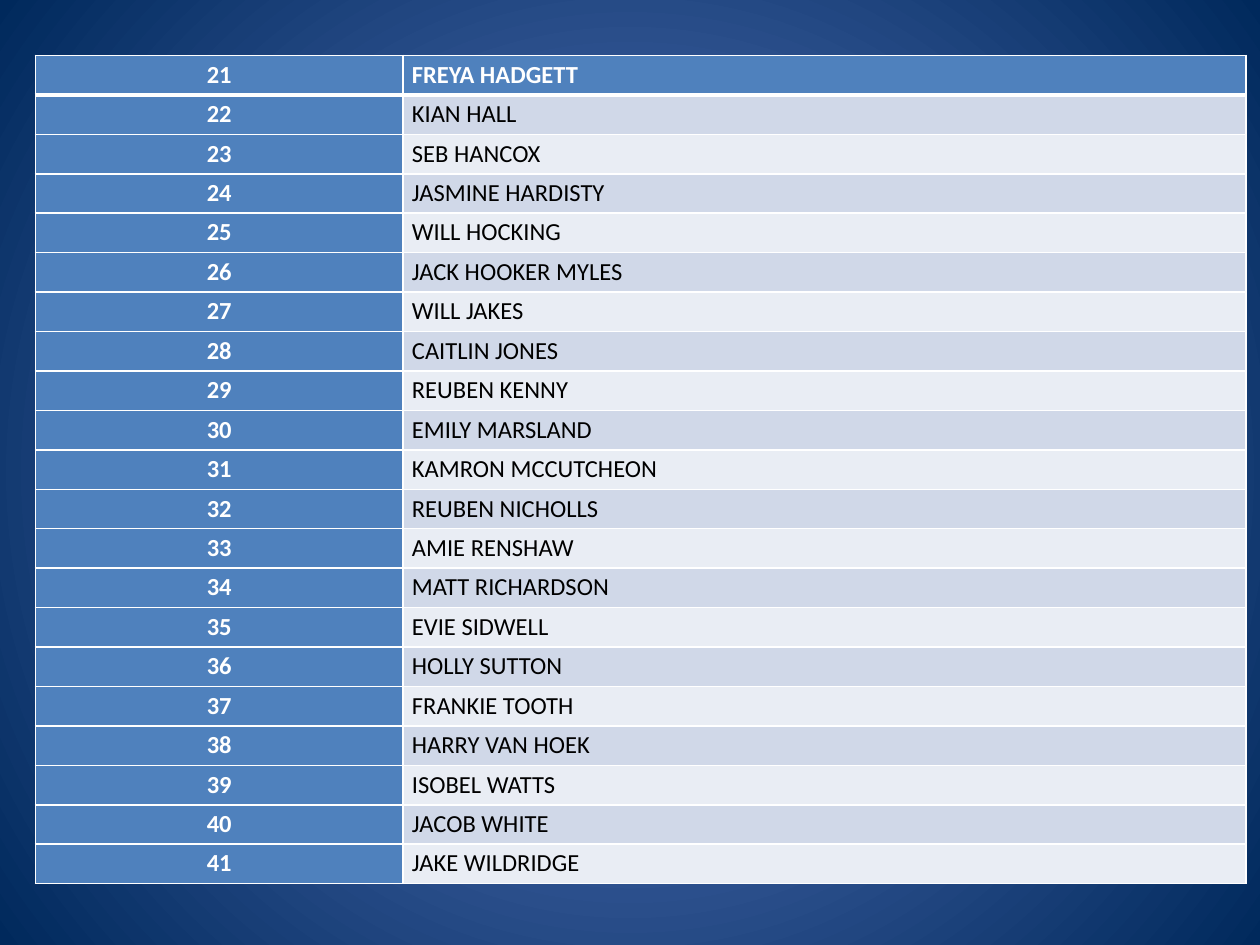
from lxml import etree
from pptx import Presentation
from pptx.dml.color import RGBColor
from pptx.enum import text
from pptx.oxml import parse_xml
from pptx.oxml.ns import nsdecls, qn
from pptx.util import Inches, Pt

WHITE = RGBColor(0xFF, 0xFF, 0xFF)
BLACK = RGBColor(0x00, 0x00, 0x00)
BLUE = RGBColor(0x4F, 0x81, 0xBD)
DARK = RGBColor(0xD0, 0xD8, 0xE8)
LIGHT = RGBColor(0xE9, 0xED, 0xF4)
GLOW = RGBColor(0x5E, 0x7C, 0xC5)
NAVY = RGBColor(0x00, 0x29, 0x5C)

FIRST = 21
NAMES = [
    "FREYA HADGETT", "KIAN HALL", "SEB HANCOX", "JASMINE HARDISTY",
    "WILL HOCKING", "JACK HOOKER MYLES", "WILL JAKES", "CAITLIN JONES",
    "REUBEN KENNY", "EMILY MARSLAND", "KAMRON MCCUTCHEON",
    "REUBEN NICHOLLS", "AMIE RENSHAW", "MATT RICHARDSON", "EVIE SIDWELL",
    "HOLLY SUTTON", "FRANKIE TOOTH", "HARRY VAN HOEK", "ISOBEL WATTS",
    "JACOB WHITE", "JAKE WILDRIDGE",
]


def add_border(cell, side, width):
    line = etree.SubElement(cell._tc.get_or_add_tcPr(), qn("a:ln" + side),
                            w=str(Pt(width)))
    fill = etree.SubElement(line, qn("a:solidFill"))
    etree.SubElement(fill, qn("a:srgbClr"), val=str(WHITE))


def fill_cell(cell, words, back, ink, bold):
    cell.margin_left = cell.margin_right = Inches(0.07)
    cell.margin_top = cell.margin_bottom = 0
    cell.fill.solid()
    cell.fill.fore_color.rgb = back
    cell.text = words
    para = cell.text_frame.paragraphs[0]
    para.line_spacing = 1.15
    para.font.name = "Calibri"
    para.font.size = Pt(14)
    para.font.bold = bold
    para.font.color.rgb = ink
    return para


prs = Presentation()
prs.slide_width = Inches(10)
prs.slide_height = Inches(7.5)
slide = prs.slides.add_slide(prs.slide_layouts[6])

# Background: a glow from the centre outwards
back = slide.background.fill
back.gradient()
for stop, color, place in zip(back.gradient_stops, (GLOW, NAVY), (0, 1)):
    stop.color.rgb = color
    stop.position = place
grad = slide._element.find(".//" + qn("a:gradFill"))
grad.replace(grad.find(qn("a:lin")), parse_xml(
    f'<a:path {nsdecls("a")} path="circle">'
    '<a:fillToRect l="50000" t="50000" r="50000" b="50000"/></a:path>'))

# Numbered list of names
table = slide.shapes.add_table(
    len(NAMES), 2, Inches(0.28), Inches(0.44), Inches(9.61), Inches(6.58)).table
table.columns[0].width = Inches(2.92)
table.columns[1].width = Inches(6.69)

for i, name in enumerate(NAMES):
    head = i == 0
    num, who = table.cell(i, 0), table.cell(i, 1)
    for cell in (num, who):
        for side in "LRTB":
            thick = (head and side == "B") or (i == 1 and side == "T")
            add_border(cell, side, 3 if thick else 1)
    para = fill_cell(num, str(FIRST + i), BLUE, WHITE, True)
    para.alignment = text.PP_ALIGN.CENTER
    band = BLUE if head else DARK if i % 2 else LIGHT
    para = fill_cell(who, name, band, WHITE if head else BLACK, head)
    para.space_after = Pt(10)

prs.save("out.pptx")
